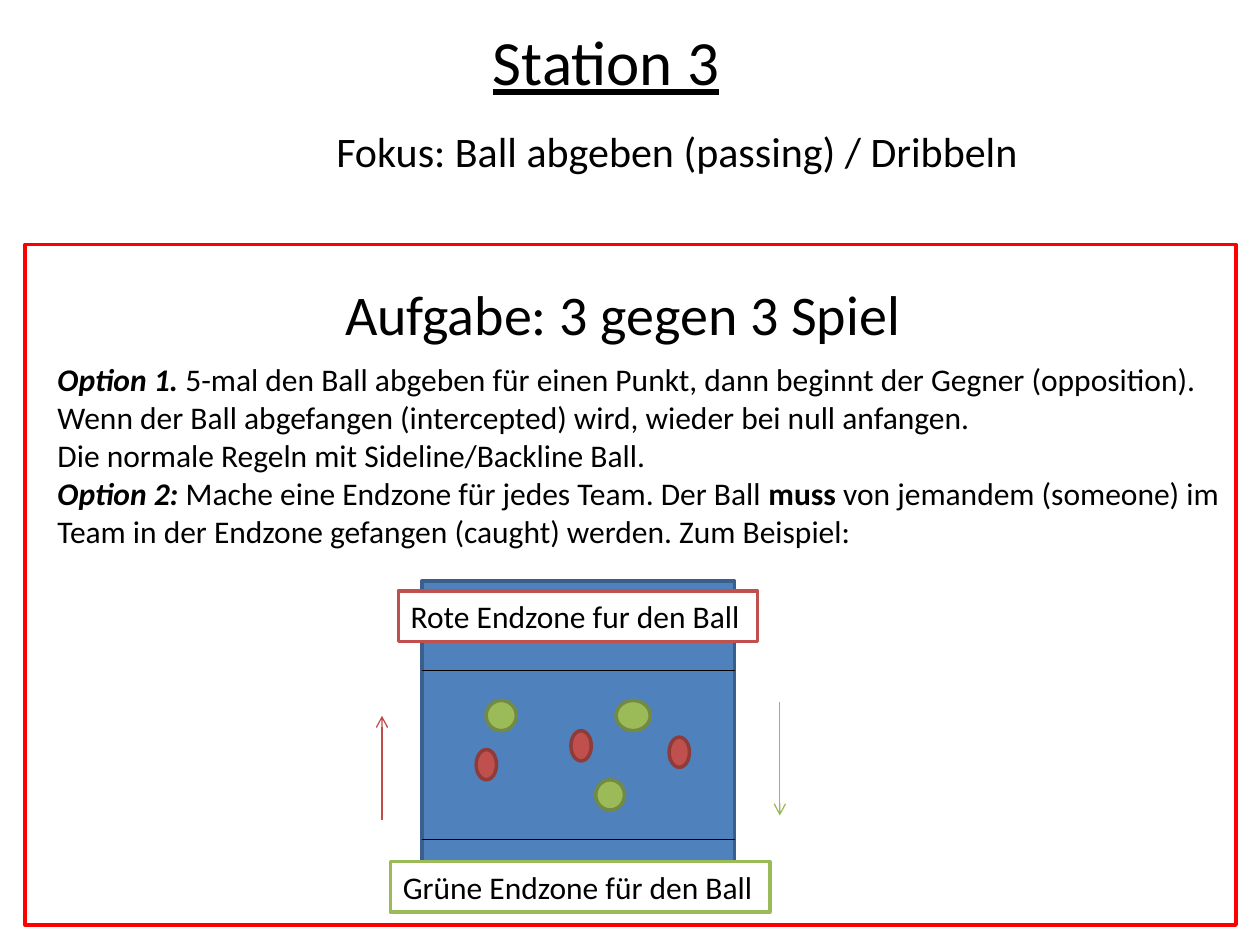
"""Build the slide for station 3: a three-against-three passing game."""
from lxml.etree import SubElement
from pptx import Presentation
from pptx.dml.color import RGBColor
from pptx.enum.shapes import MSO_CONNECTOR as LINE, MSO_SHAPE as SHAPE
from pptx.enum.text import MSO_ANCHOR as ANCHOR, MSO_AUTO_SIZE as FIT, PP_ALIGN as ALIGN
from pptx.oxml.ns import qn
from pptx.util import Cm, Pt

COLORS = {
    "text": "000000", "paper": "FFFFFF", "frame": "FF0000",
    "field": "4F81BD", "field_edge": "3A5F8C",
    "red": "C0504D", "red_edge": "8E3B39", "red_arrow": "BF4C48",
    "green": "9BBB59", "green_edge": "738A42", "green_arrow": "98B955",
}


def write(frame, paragraphs, size, wrap=False):
    frame.word_wrap = wrap
    frame.auto_size = FIT.SHAPE_TO_FIT_TEXT
    frame.vertical_anchor = ANCHOR.TOP
    for number, pieces in enumerate(paragraphs):
        paragraph = frame.add_paragraph() if number else frame.paragraphs[0]
        paragraph.alignment = ALIGN.LEFT
        for words, style in pieces:
            for row, part in enumerate(words.split("\n")):
                if row:
                    paragraph.add_line_break()
                run = paragraph.add_run()
                run.text = part
                run.font.name = "Calibri"
                run.font.size = Pt(size)
                run.font.bold = "b" in style
                run.font.italic = "i" in style
                run.font.underline = "u" in style
                run.font.color.rgb = RGBColor.from_string(COLORS["text"])


def draw(kind, box, fill, edge):
    shape = slide.shapes.add_shape(kind, *map(Cm, box))
    shape.shadow.inherit = False
    if fill:
        shape.fill.solid()
        shape.fill.fore_color.rgb = RGBColor.from_string(COLORS[fill])
    else:
        shape.fill.background()
    shape.line.color.rgb = RGBColor.from_string(COLORS[edge])
    shape.line.width = Pt(2)
    return shape


prs = Presentation()
prs.slide_width, prs.slide_height = Cm(25.4), Cm(19.05)
slide = prs.slides.add_slide(prs.slide_layouts[5])

title = slide.shapes.title
title.left, title.top, title.width, title.height = map(Cm, (9.68, 0.33, 5.13, 1.8))
write(title.text_frame, [[("Station 3", "u")]], 36)

focus = slide.shapes.add_textbox(*map(Cm, (6.53, 2.41, 23.39, 1.27)))
write(focus.text_frame, [[("Fokus: Ball abgeben (passing) / Dribbeln", "")]], 24, wrap=True)

task = slide.shapes.add_textbox(*map(Cm, (6.71, 5.51, 11.84, 1.63)))
write(task.text_frame, [[("Aufgabe: 3 gegen 3 Spiel", "")]], 32)

options = slide.shapes.add_textbox(*map(Cm, (0.91, 7.14, 24.36, 4.11)))
write(options.text_frame, [
    [("Option 1. ", "bi"),
     ("5-mal den Ball abgeben für einen Punkt, dann beginnt der Gegner (opposition).\n"
      "Wenn der Ball abgefangen (intercepted) wird, wieder bei null anfangen.\n"
      "Die normale Regeln mit Sideline/Backline Ball.", "")],
    [("Option 2: ", "bi"),
     ("Mache eine Endzone für jedes Team. Der Ball ", ""),
     ("muss", "b"),
     (" von jemandem (someone) im\n"
      "Team in der Endzone gefangen (caught) werden. Zum Beispiel:", "")],
], 18)

field_left, field_width = 8.51, 6.3
field_right = field_left + field_width
draw(SHAPE.RECTANGLE, (field_left, 11.71, field_width, 6.6), "field", "field_edge")

for start_x, start_y, end_x, end_y, color, has_arrow in (
    (field_left, 13.51, field_right, 13.51, "text", False),
    (field_left, 16.92, field_right, 16.92, "text", False),
    (7.7, 16.54, 7.7, 14.43, "red_arrow", True),
    (15.72, 14.15, 15.72, 16.44, "green_arrow", True),
):
    line = slide.shapes.add_connector(
        LINE.STRAIGHT, Cm(start_x), Cm(start_y), Cm(end_x), Cm(end_y))
    line.line.color.rgb = RGBColor.from_string(COLORS[color])
    line.line.width = Pt(0.75)
    if has_arrow:
        SubElement(line.line._get_or_add_ln(), qn("a:tailEnd"), type="arrow")
    SubElement(line._element.spPr, qn("a:effectLst"))

for label, left, top, width, team in (
    ("Rote Endzone fur den Ball", 8.03, 11.91, 7.24, "red"),
    ("Grüne Endzone für den Ball", 7.87, 17.37, 7.65, "green"),
):
    endzone = draw(SHAPE.RECTANGLE, (left, top, width, 1.02), "paper", team)
    write(endzone.text_frame, [[(label, "")]], 18)

for team, left, top, width in (
    ("red", 9.6, 15.11, 0.41),
    ("red", 11.51, 14.73, 0.41),
    ("red", 13.49, 14.86, 0.41),
    ("green", 9.8, 14.12, 0.61),
    ("green", 12.42, 14.12, 0.69),
    ("green", 12.01, 15.72, 0.58),
):
    draw(SHAPE.OVAL, (left, top, width, 0.61), team, f"{team}_edge")

draw(SHAPE.RECTANGLE, (0.51, 4.93, 24.41, 13.72), None, "frame")

prs.save("out.pptx")
